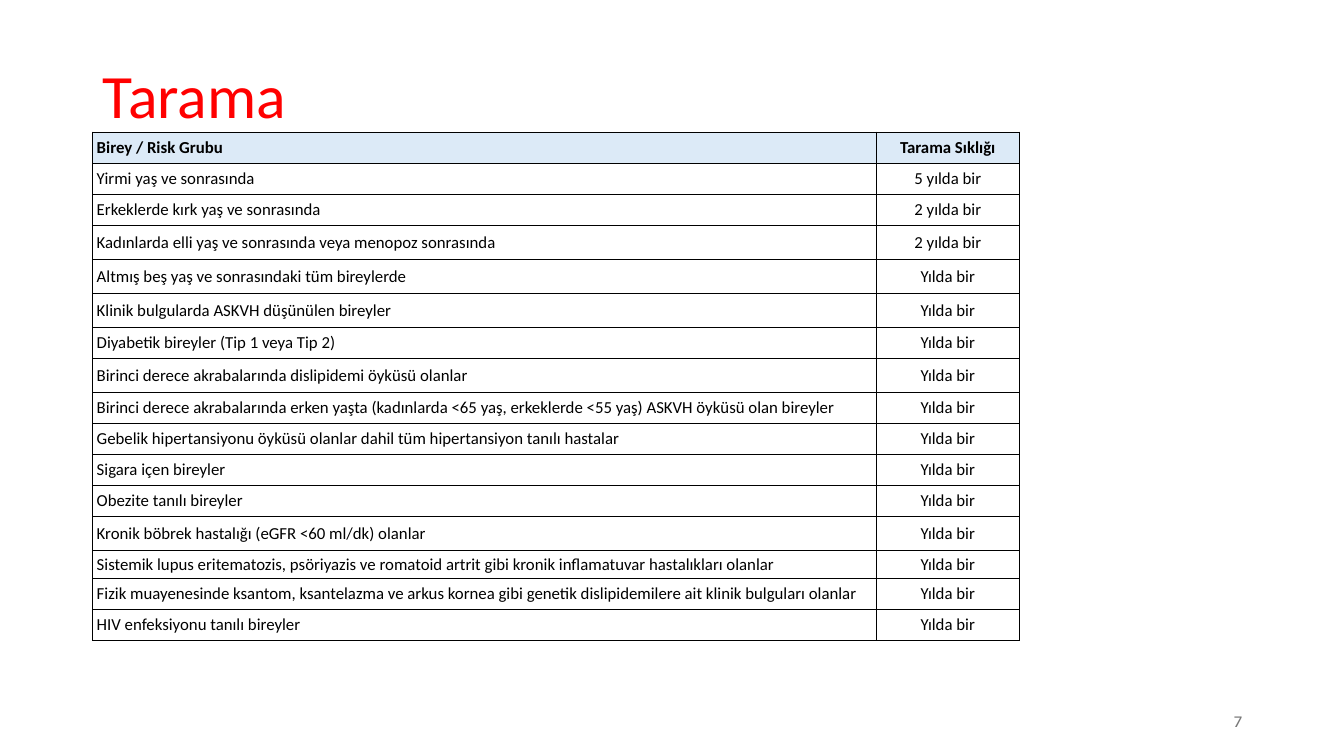
from pptx import Presentation, util as u
from pptx.dml.color import RGBColor
from pptx.enum import text as t
from pptx.oxml import parse_xml
from pptx.oxml.ns import nsdecls

RED = RGBColor(0xFF, 0x00, 0x00)
BLACK = RGBColor(0x00, 0x00, 0x00)
GRAY = RGBColor(0x79, 0x79, 0x79)
PALE = RGBColor(0xDC, 0xEA, 0xF7)
LEFT, MID, RIGHT = t.PP_ALIGN.LEFT, t.PP_ALIGN.CENTER, t.PP_ALIGN.RIGHT

deck = Presentation()
deck.slide_width, deck.slide_height = u.Inches(13.33), u.Inches(7.5)
col, row = deck.slide_width / 100, deck.slide_height / 100
page = deck.slides.add_slide(deck.slide_layouts[5])


def write(frame, words, size=12, font="Calibri", color=BLACK, bold=False,
          align=LEFT, after=0, line=1.0):
    frame.word_wrap = True
    para = frame.paragraphs[0]
    para.alignment = align
    para.space_before, para.space_after = u.Pt(0), u.Pt(after)
    para.line_spacing = line
    run = para.add_run()
    run.text = words
    run.font.size, run.font.name, run.font.bold = u.Pt(size), font, bold
    run.font.color.rgb = color


head = page.shapes.title
head.left, head.top = int(6.9 * col), int(5.33 * row)
head.width, head.height = int(86.25 * col), int(15.33 * row)
head.text_frame.auto_size = t.MSO_AUTO_SIZE.NONE
head.text_frame.vertical_anchor = t.MSO_ANCHOR.MIDDLE
write(head.text_frame, "Tarama", size=44, color=RED, line=0.9)

num = page.shapes.add_textbox(int(70.65 * col), int(92.67 * row),
                              int(22.5 * col), int(5.33 * row))
num.text_frame.vertical_anchor = t.MSO_ANCHOR.MIDDLE
write(num.text_frame, "7", font="Karla", color=GRAY, align=RIGHT)

LOW, MED, TALL = 3.75, 4.1, 4.5
YEAR = "Yılda bir"
risks = [
    ("Birey / Risk Grubu", "Tarama Sıklığı", MED),
    ("Yirmi yaş ve sonrasında", "5 yılda bir", MED),
    ("Erkeklerde kırk yaş ve sonrasında", "2 yılda bir", MED),
    ("Kadınlarda elli yaş ve sonrasında veya menopoz sonrasında", "2 yılda bir", TALL),
    ("Altmış beş yaş ve sonrasındaki tüm bireylerde", YEAR, TALL),
    ("Klinik bulgularda ASKVH düşünülen bireyler", YEAR, TALL),
    ("Diyabetik bireyler (Tip 1 veya Tip 2)", YEAR, MED),
    ("Birinci derece akrabalarında dislipidemi öyküsü olanlar", YEAR, TALL),
    ("Birinci derece akrabalarında erken yaşta (kadınlarda <65 yaş, "
     "erkeklerde <55 yaş) ASKVH öyküsü olan bireyler", YEAR, MED),
    ("Gebelik hipertansiyonu öyküsü olanlar dahil tüm hipertansiyon tanılı hastalar",
     YEAR, MED),
    ("Sigara içen bireyler", YEAR, MED),
    ("Obezite tanılı bireyler", YEAR, MED),
    ("Kronik böbrek hastalığı (eGFR <60 ml/dk) olanlar", YEAR, TALL),
    ("Sistemik lupus eritematozis, psöriyazis ve romatoid artrit gibi kronik "
     "inflamatuvar hastalıkları olanlar", YEAR, LOW),
    ("Fizik muayenesinde ksantom, ksantelazma ve arkus kornea gibi genetik "
     "dislipidemilere ait klinik bulguları olanlar", YEAR, MED),
    ("HIV enfeksiyonu tanılı bireyler", YEAR, MED),
]
wide = [58.3, 10.65]
tall = sum(risk[2] for risk in risks)
grid = page.shapes.add_table(len(risks), len(wide), int(6.9 * col), int(17.5 * row),
                             int(sum(wide) * col), int(tall * row)).table
grid.first_row = grid.horz_banding = False
for i, share in enumerate(wide):
    grid.columns[i].width = int(share * col)

for i, (group, often, high) in enumerate(risks):
    grid.rows[i].height = int(high * row)
    for j, (words, align) in enumerate([(group, LEFT), (often, MID)]):
        cell = grid.cell(i, j)
        cell.margin_left = cell.margin_right = u.Inches(0.04)
        cell.margin_top = cell.margin_bottom = u.Inches(0.02)
        cell.vertical_anchor = t.MSO_ANCHOR.MIDDLE
        write(cell.text_frame, words, bold=i == 0, align=align, after=6)
        for side in ("lnL", "lnR", "lnT", "lnB"):
            cell._tc.get_or_add_tcPr().append(parse_xml(
                f'<a:{side} {nsdecls("a")} w="{u.Pt(1)}"><a:solidFill>'
                f'<a:srgbClr val="{BLACK}"/></a:solidFill></a:{side}>'))
        if i == 0:
            cell.fill.solid()
            cell.fill.fore_color.rgb = PALE
        else:
            cell.fill.background()

deck.save("out.pptx")
